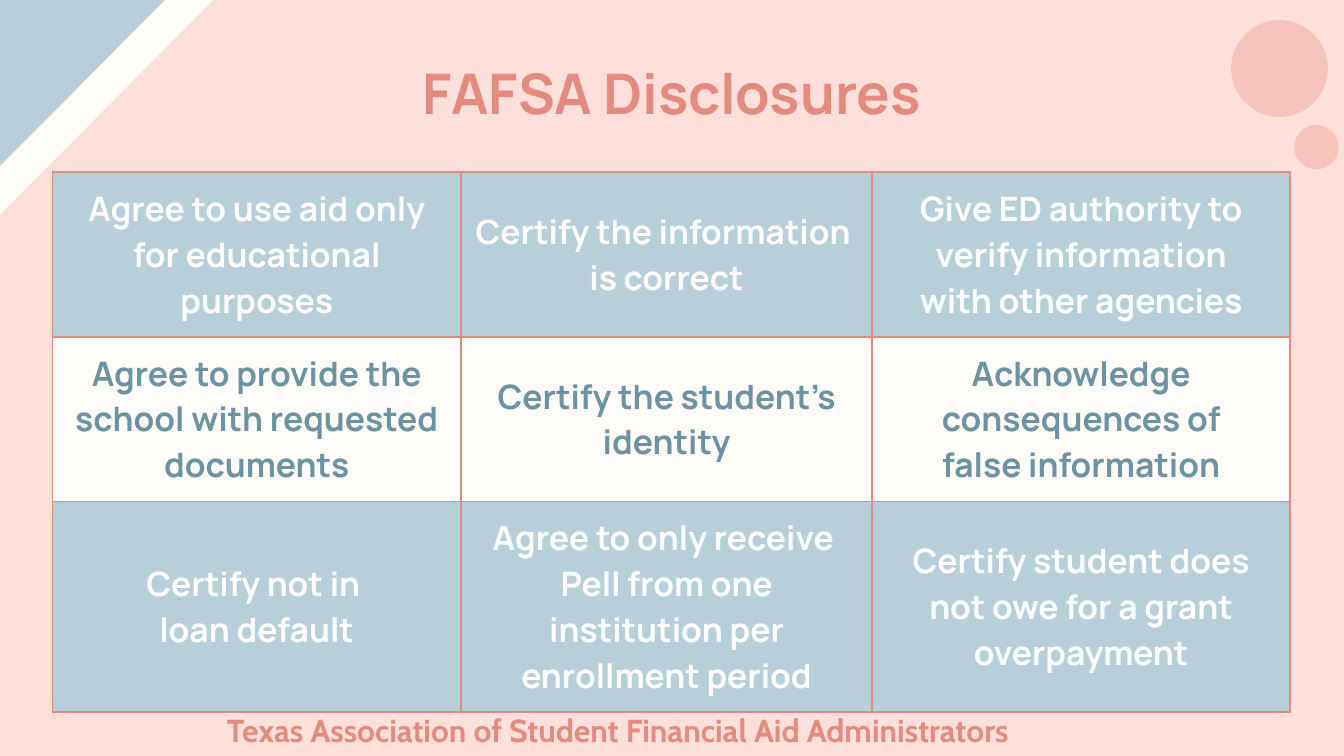
from lxml import etree
from pptx import Presentation
from pptx.dml.color import RGBColor
from pptx.enum import shapes, text
from pptx.oxml import ns
from pptx.util import Inches, Pt

# Content
TITLE = "FAFSA Disclosures"
DISCLOSURES = [
    ["Agree to use aid only for educational purposes",
     "Certify the information \nis correct",
     "Give ED authority to verify information with other agencies"],
    ["Agree to provide the school with requested documents",
     "Certify the student’s identity",
     "Acknowledge consequences of false information"],
    ["Certify not in \nloan default",
     "Agree to only receive \nPell from one institution per enrollment period",
     "Certify student does not owe for a grant overpayment"],
]
ASSOCIATION = "Texas Association of Student Financial Aid Administrators"

# Style
PINK, CORAL, BLUE, TEAL, CREAM = "FFDFD9", "E48B7F", "B6CFD8", "6C93A1", "FFFCF9"
COLUMN_WIDTHS = [3.04, 3.06, 3.11]
ROW_HEIGHTS = [1.19, 1.04, 1.04]
SIDE_MARGINS = [0.1, 0.1, 0.25]
CELL_COLORS = [  # fill, then text colour of each column
    (BLUE, (CREAM, CREAM, "FFFFFF")),
    (CREAM, (TEAL, TEAL, TEAL)),
    (BLUE, ("FFFFFF", "FFFFFF", "FFFFFF")),
]
RECT, OVAL = shapes.MSO_SHAPE.RECTANGLE, shapes.MSO_SHAPE.OVAL
DECORATIONS = [  # preset, box, rotation, colour, opacity in percent
    (RECT, (0.56, -0.95, 0.25, 3.36), 224.8, CREAM, 100),
    (RECT, (-0.35, -1.43, 1.1, 3.36), 224.8, BLUE, 100),
    (OVAL, (9.16, 0.15, 0.72, 0.72), 68.8, CORAL, 31),
    (OVAL, (9.63, 0.93, 0.33, 0.33), 68.8, CORAL, 31),
]


def paint(fill, color):
    fill.solid()
    fill.fore_color.rgb = RGBColor.from_string(color)


def style(paragraph, font_name, size, color, align):
    paragraph.alignment = align
    font = paragraph.font
    font.name, font.size, font.bold = font_name, Pt(size), True
    font.color.rgb = RGBColor.from_string(color)


def add_borders(cell, color, width):
    properties = cell._tc.get_or_add_tcPr()
    for index, side in enumerate(("lnL", "lnR", "lnT", "lnB")):
        line = etree.Element(ns.qn("a:" + side), w=str(Pt(width)))
        solid = etree.SubElement(line, ns.qn("a:solidFill"))
        etree.SubElement(solid, ns.qn("a:srgbClr"), val=color)
        properties.insert(index, line)


# Widescreen 16:9 slide
prs = Presentation()
prs.slide_width = Inches(10)
prs.slide_height = prs.slide_width * 9 // 16
slide = prs.slides.add_slide(prs.slide_layouts[5])
paint(slide.background.fill, PINK)

# Corner bands and circles
for preset, box, rotation, color, opacity in DECORATIONS:
    decoration = slide.shapes.add_shape(preset, *map(Inches, box))
    decoration.rotation = rotation
    decoration.shadow.inherit = False
    decoration.line.fill.background()
    paint(decoration.fill, color)
    if opacity < 100:
        tint = decoration._element.spPr.find(".//" + ns.qn("a:srgbClr"))
        etree.SubElement(tint, ns.qn("a:alpha"), val=str(opacity * 1000))

# Title
title = slide.shapes.title
title.left, title.top, title.width, title.height = map(Inches, (0.78, 0.34, 8.44, 0.63))
title.text_frame.text = TITLE
title.text_frame.auto_size = text.MSO_AUTO_SIZE.NONE
title.text_frame.vertical_anchor = text.MSO_ANCHOR.MIDDLE
title.text_frame.margin_top, title.text_frame.margin_bottom = Inches(0.16), Inches(0.1)
style(title.text_frame.paragraphs[0], "Manrope", 30, CORAL, text.PP_ALIGN.CENTER)

# Disclosure table
table = slide.shapes.add_table(
    len(DISCLOSURES), len(COLUMN_WIDTHS), Inches(0.39), Inches(1.28),
    Inches(sum(COLUMN_WIDTHS)), Inches(sum(ROW_HEIGHTS))).table
table.first_row = table.horz_banding = False
for column, width in zip(table.columns, COLUMN_WIDTHS):
    column.width = Inches(width)
for row, height, disclosures, (fill, inks) in zip(
        table.rows, ROW_HEIGHTS, DISCLOSURES, CELL_COLORS):
    row.height = Inches(height)
    for cell, disclosure, margin, ink in zip(row.cells, disclosures, SIDE_MARGINS, inks):
        cell.text = disclosure
        cell.vertical_anchor = text.MSO_ANCHOR.MIDDLE
        cell.margin_left = cell.margin_right = Inches(margin)
        cell.margin_top = cell.margin_bottom = Inches(0.1)
        paint(cell.fill, fill)
        add_borders(cell, CORAL, 1)
        for paragraph in cell.text_frame.paragraphs:
            style(paragraph, "Manrope", 18, ink, text.PP_ALIGN.CENTER)

# Association line
association = slide.shapes.add_textbox(*map(Inches, (1.59, 5.24, 6.82, 0.39))).text_frame
association.word_wrap = True
association.auto_size = text.MSO_AUTO_SIZE.SHAPE_TO_FIT_TEXT
association.text = ASSOCIATION
style(association.paragraphs[0], "Cabin", 17, CORAL, text.PP_ALIGN.LEFT)

prs.save("out.pptx")
